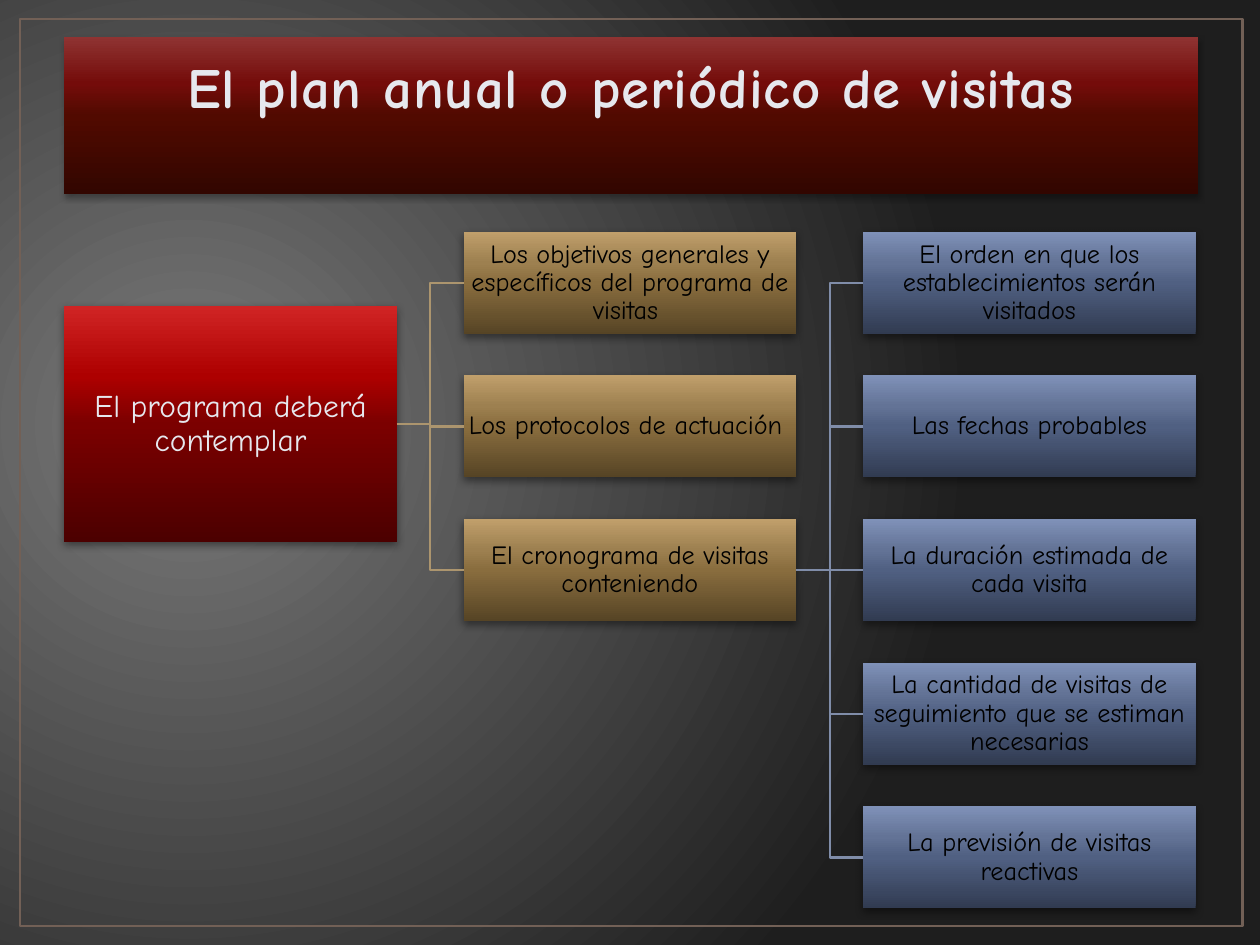
from dataclasses import dataclass

from lxml import etree
from pptx import Presentation
from pptx import util as u
from pptx.dml.color import RGBColor
from pptx.enum import shapes, text
from pptx.oxml import parse_xml
from pptx.oxml.ns import nsdecls, qn

Stops = tuple[tuple[int, str], ...]


@dataclass(frozen=True)
class Theme:
    font: str = "Comic Neue"
    light: str = "E6E8EE"
    dark: str = "000000"
    frame: str = "726056"
    tan_line: str = "AC956E"
    blue_line: str = "808DA9"
    title_outline: str = "560000"
    title_size: float = 32.4
    root_size: float = 18
    node_size: float = 15
    backdrop: Stops = ((0, "7A7A7A"), (100, "1E1E1E"))
    banner: Stops = ((0, "320600"), (50, "510A00"), (70, "740C0A"), (100, "8F3332"))
    red: Stops = ((0, "4C0000"), (50, "7B0000"), (70, "AD0000"), (100, "D02424"))
    tan: Stops = ((0, "564425"), (50, "896D3E"), (70, "9D8050"), (100, "C09F6B"))
    blue: Stops = ((0, "313B51"), (50, "506082"), (70, "637396"), (100, "7F91B8"))


@dataclass(frozen=True)
class Shadow:
    opacity: int
    blur: float
    distance: float


@dataclass(frozen=True)
class Node:
    label: str
    left: float
    top: float
    height: float
    stops: Stops
    color: str
    size: float


THEME = Theme()
UPWARD = '<a:lin ang="16200000" scaled="0"/>'
GLOW = ('<a:path path="circle"><a:fillToRect l="15000" t="50000" '
        'r="85000" b="60000"/></a:path>')
NODE_WIDTH, NODE_HEIGHT = 2.64, 0.81
FIRST_TOP, ROW_STEP = 1.84, 1.14
LEFT, RIGHT = 1, 3  # connection sites of a rectangle

GOALS = (
    "Los objetivos generales y específicos del programa de visitas ",
    "Los protocolos de actuación ",
    "El cronograma de visitas conteniendo",
)
SCHEDULE = (
    "El orden en que los establecimientos serán visitados",
    "Las fechas probables",
    "La duración estimada de cada visita",
    "La cantidad de visitas de seguimiento que se estiman necesarias",
    "La previsión de visitas reactivas",
)


def apply(target, values: dict) -> None:
    for name, value in values.items():
        setattr(target, name, value)


def paint_gradient(fill, holder, stops: Stops, direction: str) -> None:
    """Swap a solid fill for a gradient with any number of stops."""
    fill.solid()
    marks = "".join(
        f'<a:gs pos="{pos * 1000}"><a:srgbClr val="{color}"/></a:gs>'
        for pos, color in stops)
    gradient = parse_xml(
        f'<a:gradFill {nsdecls("a")} rotWithShape="1">'
        f'<a:gsLst>{marks}</a:gsLst>{direction}</a:gradFill>')
    solid = holder.find(qn("a:solidFill"))
    holder.replace(solid, gradient)


def draw_stroke(line, color: str, width: float) -> None:
    line.color.rgb = RGBColor.from_string(color)
    line.width = u.Pt(width)


def cast_shadow(shape, shadow: Shadow) -> None:
    shape.shadow.inherit = False
    effects = shape.element.spPr.find(qn("a:effectLst"))
    effects.append(parse_xml(
        f'<a:outerShdw {nsdecls("a")} blurRad="{u.Pt(shadow.blur)}" '
        f'dist="{u.Pt(shadow.distance)}" dir="5400000" rotWithShape="0">'
        f'<a:srgbClr val="{THEME.dark}"><a:alpha val="{shadow.opacity * 1000}"/>'
        '</a:srgbClr></a:outerShdw>'))


def write(box, label: str, color: str, size: float, frame_format: dict,
          bold: bool = False, line_spacing: float = 1.0):
    frame = box.text_frame
    apply(frame, {"word_wrap": True, "auto_size": text.MSO_AUTO_SIZE.NONE,
                  **frame_format})
    para = frame.paragraphs[0]
    apply(para, {"alignment": text.PP_ALIGN.CENTER, "line_spacing": line_spacing})
    span = para.add_run()
    span.text = label
    apply(span.font, {"name": THEME.font, "size": u.Pt(size), "bold": bold})
    span.font.color.rgb = RGBColor.from_string(color)
    return span


def draw_title(page, label: str) -> None:
    title = page.shapes.title
    apply(title, {"left": u.Inches(0.51), "top": u.Inches(0.29),
                  "width": u.Inches(9), "height": u.Inches(1.25)})
    paint_gradient(title.fill, title.element.spPr, THEME.banner, UPWARD)
    cast_shadow(title, Shadow(32, 3.5, 2.2))
    span = write(title, label, THEME.light, THEME.title_size,
                 {"vertical_anchor": text.MSO_ANCHOR.BOTTOM,
                  "margin_bottom": u.Inches(0.59)}, bold=True)
    # Letter spacing and a thin outline around the letters
    props = span.font._element
    props.set("spc", "50")
    props.insert(0, parse_xml(
        f'<a:ln {nsdecls("a")} w="{u.Pt(1.05)}"><a:solidFill>'
        f'<a:srgbClr val="{THEME.title_outline}"/></a:solidFill></a:ln>'))


def draw_frame(page) -> None:
    frame = page.shapes.add_shape(
        shapes.MSO_SHAPE.RECTANGLE, *map(u.Inches, (0.16, 0.15, 9.7, 7.2)))
    frame.fill.background()
    frame.shadow.inherit = False
    draw_stroke(frame.line, THEME.frame, 1.5)


def draw_node(page, node: Node):
    box = page.shapes.add_shape(
        shapes.MSO_SHAPE.RECTANGLE,
        *map(u.Inches, (node.left, node.top, NODE_WIDTH, node.height)))
    paint_gradient(box.fill, box.element.spPr, node.stops, UPWARD)
    box.line.fill.background()
    cast_shadow(box, Shadow(43, 5, 2))
    sides = ("left", "top", "right", "bottom")
    write(box, node.label, node.color, node.size,
          {"vertical_anchor": text.MSO_ANCHOR.MIDDLE,
           **{f"margin_{side}": u.Inches(0.01) for side in sides}},
          line_spacing=0.9)
    return box


def draw_column(page, labels: tuple[str, ...], left: float, stops: Stops) -> list:
    return [draw_node(page, Node(label, left, FIRST_TOP + row * ROW_STEP, NODE_HEIGHT,
                                 stops, THEME.dark, THEME.node_size))
            for row, label in enumerate(labels)]


def link(page, parent, children: list, color: str) -> None:
    """Join a parent to its children: straight when level, else a bent outline."""
    start_x, start_y = parent.left + parent.width, parent.top + parent.height // 2
    for child in children:
        end_x, end_y = child.left, child.top + child.height // 2
        if start_y == end_y:
            branch = page.shapes.add_connector(
                shapes.MSO_CONNECTOR.STRAIGHT, start_x, start_y, end_x, end_y)
            branch.begin_connect(parent, RIGHT)
            branch.end_connect(child, LEFT)
            etree.SubElement(branch._element.spPr, qn("a:effectLst"))
        else:
            bend_x = (start_x + end_x) // 2
            outline = page.shapes.build_freeform(start_x, start_y)
            outline.add_line_segments(
                [(bend_x, start_y), (bend_x, end_y), (end_x, end_y)], close=False)
            branch = outline.convert_to_shape()
            branch.fill.background()
            branch.shadow.inherit = False
        draw_stroke(branch.line, color, 1.25)


def main() -> None:
    deck = Presentation()
    apply(deck, {"slide_width": u.Inches(10), "slide_height": u.Inches(7.5)})
    page = deck.slides.add_slide(deck.slide_layouts.get_by_name("Title Only"))

    # Backdrop, frame and title
    backdrop = page.background.fill
    backdrop.solid()
    holder = next(page.element.iter(qn("p:bgPr")))
    paint_gradient(backdrop, holder, THEME.backdrop, GLOW)
    draw_frame(page)
    draw_title(page, "El plan anual o periódico de visitas")

    # Three levels of the tree
    root = draw_node(page, Node("El programa deberá contemplar", 0.51, 2.43, 1.87,
                                THEME.red, THEME.light, THEME.root_size))
    goals = draw_column(page, GOALS, 3.68, THEME.tan)
    schedule = draw_column(page, SCHEDULE, 6.85, THEME.blue)

    # Branches
    link(page, root, goals, THEME.tan_line)
    link(page, goals[-1], schedule, THEME.blue_line)

    deck.save("out.pptx")


if __name__ == "__main__":
    main()
